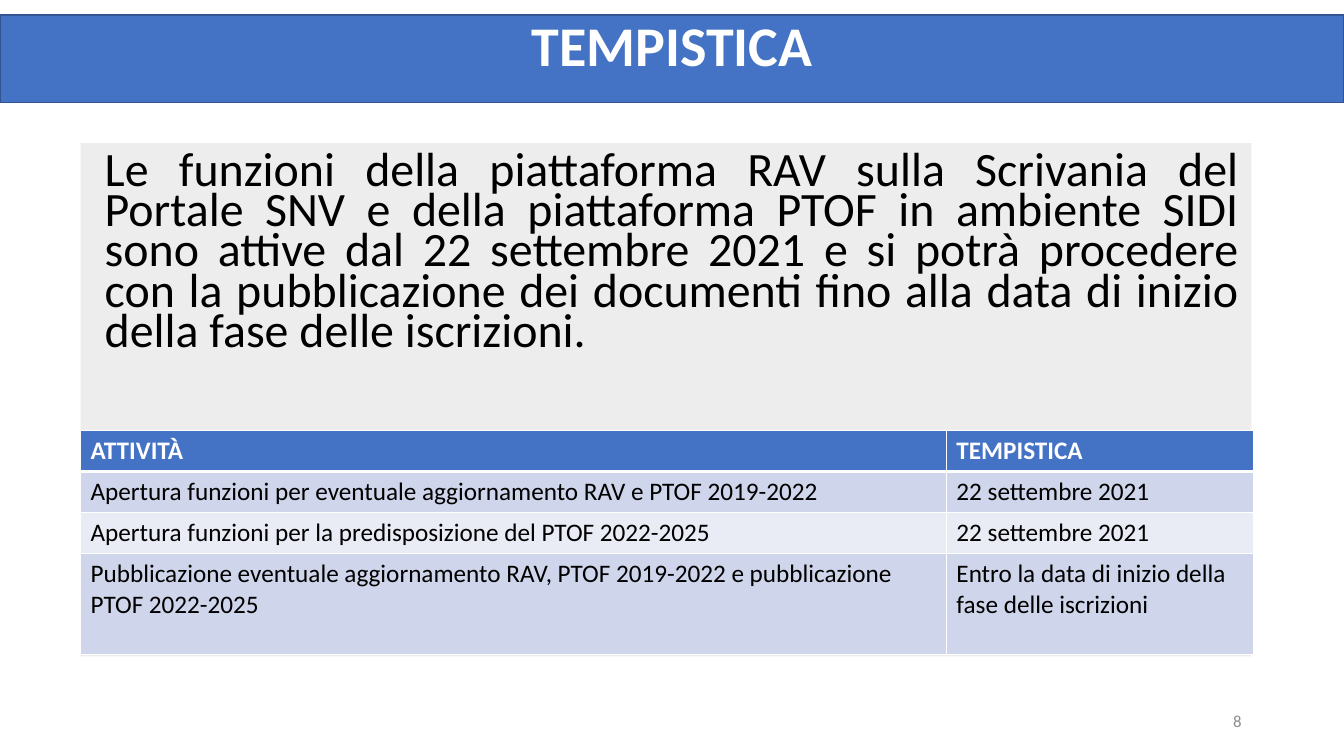
"""Build the TEMPISTICA slide with its banner, notice and schedule table."""
from lxml.etree import SubElement
from pptx import Presentation
from pptx.dml.color import RGBColor
from pptx.enum.shapes import MSO_SHAPE
from pptx.enum.text import MSO_ANCHOR, PP_ALIGN
from pptx.oxml.ns import qn
from pptx.util import Cm, Pt

TITLE = "TEMPISTICA"
NOTICE = (
    "Le funzioni della piattaforma RAV sulla Scrivania del Portale SNV e della "
    "piattaforma PTOF in ambiente SIDI sono attive dal 22 settembre 2021 e si potrà "
    "procedere con la pubblicazione dei documenti fino alla data di inizio della "
    "fase delle iscrizioni."
)
PAGE = "8"
SCHEDULE = [
    ("ATTIVITÀ", "TEMPISTICA"),
    ("Apertura funzioni per eventuale aggiornamento RAV e PTOF 2019-2022",
     "22 settembre 2021"),
    ("Apertura funzioni per la predisposizione del PTOF 2022-2025",
     "22 settembre 2021"),
    ("Pubblicazione eventuale aggiornamento RAV, PTOF 2019-2022 e pubblicazione "
     "PTOF 2022-2025", "Entro la data di inizio della fase delle iscrizioni"),
]
COL_WIDTHS = (21.82, 7.75)
ROW_HEIGHTS = (1.03, 1.03, 1.03, 2.55)
BLUE, WHITE, BLACK = "4472C4", "FFFFFF", "000000"
BANDS = ("E9EBF5", "CFD5EA")
LEFT = 2.03


def rgb(value):
    return RGBColor.from_string(value)


def write(tf, text, size, color, align=PP_ALIGN.LEFT, bold=False):
    tf.word_wrap = True
    p = tf.paragraphs[0]
    p.alignment = align
    r = p.add_run()
    r.text = text
    r.font.name = "Calibri"
    r.font.size = Pt(size)
    r.font.bold = bold
    r.font.color.rgb = rgb(color)
    return p


def add_rect(box, fill, line=None):
    s = slide.shapes.add_shape(MSO_SHAPE.RECTANGLE, *map(Cm, box))
    s.shadow.inherit = False
    s.fill.solid()
    s.fill.fore_color.rgb = rgb(fill)
    if line:
        s.line.color.rgb = rgb(line)
        s.line.width = Pt(1)
    else:
        s.line.fill.background()
    return s


def add_text(box, *args):
    tf = slide.shapes.add_textbox(*map(Cm, box)).text_frame
    return tf, write(tf, *args)


def set_borders(cell, widths):
    tcPr = cell._tc.get_or_add_tcPr()
    for i, (side, width) in enumerate(widths.items()):
        ln = SubElement(tcPr, qn(f"a:ln{side}"), w=str(Pt(width)))
        fill = SubElement(ln, qn("a:solidFill"))
        SubElement(fill, qn("a:srgbClr"), val=WHITE)
        tcPr.insert(i, ln)


prs = Presentation()
prs.slide_width, prs.slide_height = Cm(33.87), Cm(19.05)
slide = prs.slides.add_slide(prs.slide_layouts[6])

add_rect((LEFT, 3.61, 29.51, 12.93), "EDEDED")
tf, p = add_text((2.39, 3.76, 29.08, 5.94), NOTICE, 34.2, BLACK, PP_ALIGN.JUSTIFY)
p.line_spacing = 0.7
p.space_before = Pt(10)

tf, p = add_text((23.92, 17.65, 7.62, 1.02), PAGE, 12, "8C8C8C", PP_ALIGN.RIGHT)
tf.vertical_anchor = MSO_ANCHOR.MIDDLE

tf = add_rect((0, 0.38, 33.87, 2.21), BLUE, "325491").text_frame
tf.vertical_anchor = MSO_ANCHOR.MIDDLE
tf.margin_top, tf.margin_bottom = Cm(0), Cm(0.76)
write(tf, TITLE, 40, WHITE, PP_ALIGN.CENTER, True)

table = slide.shapes.add_table(
    len(SCHEDULE), len(COL_WIDTHS), Cm(LEFT), Cm(10.85),
    Cm(sum(COL_WIDTHS)), Cm(sum(ROW_HEIGHTS))).table
for col, width in zip(table.columns, COL_WIDTHS):
    col.width = Cm(width)
for i, (row, height, texts) in enumerate(zip(table.rows, ROW_HEIGHTS, SCHEDULE)):
    row.height = Cm(height)
    header = i == 0
    for cell, text in zip(row.cells, texts):
        write(cell.text_frame, text, 18, WHITE if header else BLACK, bold=header)
        cell.fill.solid()
        cell.fill.fore_color.rgb = rgb(BLUE if header else BANDS[i % 2])
        set_borders(cell, {"L": 1, "R": 1, "T": 3 if i == 1 else 1,
                           "B": 3 if header else 1})

prs.save("out.pptx")
